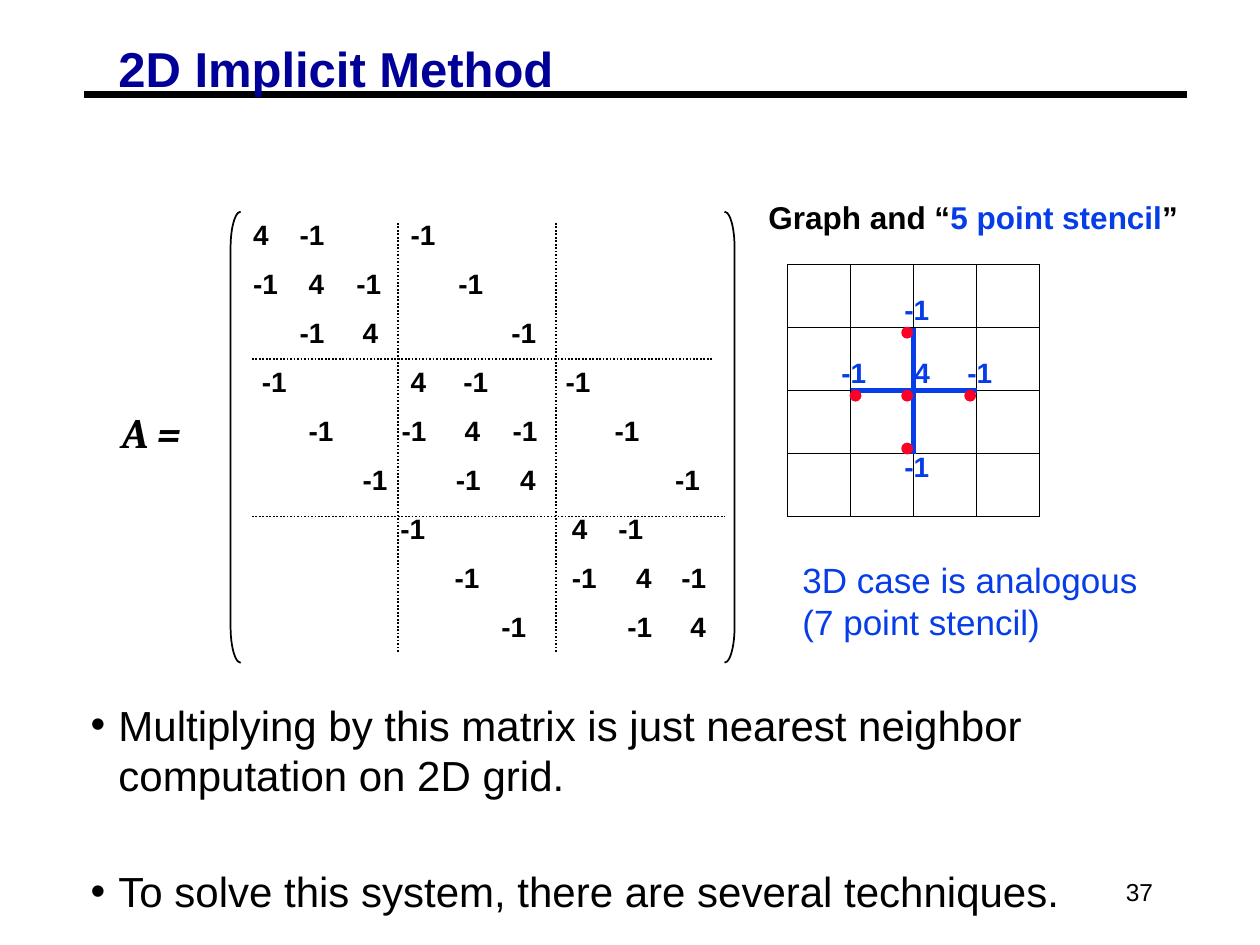
"""Build the "2D Implicit Method" slide: a block matrix, its grid stencil and two bullets."""
from dataclasses import dataclass

from lxml.etree import SubElement
from pptx import Presentation
from pptx.dml.color import RGBColor
from pptx.enum.dml import MSO_LINE
from pptx.enum.shapes import MSO_CONNECTOR, MSO_SHAPE
from pptx.enum.text import MSO_ANCHOR, MSO_AUTO_SIZE, PP_ALIGN
from pptx.oxml.ns import qn
from pptx.util import Inches, Pt


@dataclass(frozen=True)
class Theme:
    ink: RGBColor = RGBColor.from_string("000000")
    navy: RGBColor = RGBColor.from_string("000099")
    blue: RGBColor = RGBColor.from_string("063DE8")
    red: RGBColor = RGBColor.from_string("FC0128")
    font: str = "Arial"
    math: str = "Cambria"
    title: int = 28
    body: int = 24
    note: int = 20
    head: int = 18
    entry: int = 16
    page: int = 14


T = Theme()
prs = Presentation()
prs.slide_width, prs.slide_height = Inches(10), Inches(7.5)
COL, ROW = prs.slide_width / 20, prs.slide_height / 15
s = prs.slides.add_slide(prs.slide_layouts[1])


def grid(x, y, w, h):
    return [int(x * COL), int(y * ROW), int(w * COL), int(h * ROW)]


def write(sp, lines, size, color, bold=False, font=T.font, wrap=True, before=0):
    tf = sp.text_frame
    tf.word_wrap = wrap
    tf.auto_size = MSO_AUTO_SIZE.NONE
    tf.vertical_anchor = MSO_ANCHOR.TOP
    tf.text = "\n".join(lines)
    for i, p in enumerate(tf.paragraphs):
        p.alignment = PP_ALIGN.LEFT
        p.space_before = Pt(before if i else 0)
        p.font.size, p.font.name, p.font.bold = Pt(size), font, bold
        p.font.color.rgb = color
    return tf


title, body = s.placeholders
title.left, title.top, title.width, title.height = grid(1.74, 0.68, 9.08, 0.92)
body.left, body.top, body.width, body.height = grid(1.3, 11.04, 17.5, 3.82)
write(title, ["2D Implicit Method"], T.title, T.navy, True).paragraphs[0].line_spacing = 0.87
bullets = ["Multiplying by this matrix is just nearest neighbor computation on 2D grid.",
           "To solve this system, there are several techniques."]
for p in write(body, bullets, T.body, T.ink, before=37.5).paragraphs:
    pPr = p._p.get_or_add_pPr()
    pPr.set("marL", str(Inches(0.22)))
    pPr.set("indent", str(-Inches(0.22)))
for sp in (title, body):
    tf = sp.text_frame
    tf.margin_left = tf.margin_right = Inches(0.07)
    tf.margin_top = tf.margin_bottom = Inches(0.03)

GX, GY, CX, CY = 12.5, 4.2, 14.5, 6.2
squares = [(0, 0, 4), (0, 2, 2), (2, 0, 2)]
squares += [(c, r, 1) for c in range(4) for r in range(4) if (c + r) % 2 == (c < 2)]
outlines = [(MSO_SHAPE.RECTANGLE, GX + c, GY + r, n, n) for c, r, n in squares]
outlines += [(MSO_SHAPE.LEFT_BRACKET, 3.66, 3.36, 0.16, 7.16),
             (MSO_SHAPE.RIGHT_BRACKET, 11.5, 3.36, 0.16, 7.16)]
drawn = []
for kind, *place in outlines:
    sp = s.shapes.add_shape(kind, *grid(*place))
    sp.shadow.inherit = False
    sp.fill.background()
    sp.line.color.rgb, sp.line.width = T.ink, Pt(1)
    if kind != MSO_SHAPE.RECTANGLE:
        sp.adjustments[0] = 3.583
    drawn.append(sp)
lower, upper = drawn[1:3]

lines = [(1.34, 1.5, 18.84, 1.5, T.ink, 3.75, None),
         (CX - 1, CY, CX + 1, CY, T.blue, 3, None),
         (CX, CY - 1, CX, CY + 1, T.blue, 3, None),
         (4, 5.7, 11.32, 5.7, T.ink, 1, MSO_LINE.ROUND_DOT),
         (4, 8.2, 11.5, 8.2, T.ink, 1, MSO_LINE.ROUND_DOT),
         (6.32, 3.54, 6.32, 10.36, T.ink, 1, MSO_LINE.ROUND_DOT),
         (8.82, 3.54, 8.82, 10.36, T.ink, 1, MSO_LINE.ROUND_DOT)]
joined = []
for *ends, color, width, dash in lines:
    cn = s.shapes.add_connector(MSO_CONNECTOR.STRAIGHT, *grid(*ends))
    cn.line.color.rgb, cn.line.width = color, Pt(width)
    if dash:
        cn.line.dash_style = dash
    SubElement(cn.element.spPr, qn("a:effectLst"))
    joined.append(cn)
rule, across, down = joined[:3]
s.shapes.element.insert(2, rule.element)
across.begin_connect(lower, 0)
across.end_connect(upper, 2)
down.begin_connect(upper, 1)
down.end_connect(lower, 3)

stencil = [("4", 0.16, 0, 0, 0), ("-1", 0, 1.5, 0, 0.84), ("-1", -1, 0, -0.82, 0),
           ("-1", 0, -1, 0, -1), ("-1", 1, 0, 1, 0)]
for label, dx, dy, dot_dx, dot_dy in stencil:
    sp = s.shapes.add_textbox(*grid(CX - 0.34 + dx, CY - 0.66 + dy, 0.8, 0.74))
    write(sp, [label], T.entry, T.blue, True, wrap=False)
    dot = s.shapes.add_shape(MSO_SHAPE.OVAL, *grid(CX - 0.18 + dot_dx, CY + dot_dy, 0.16, 0.16))
    dot.shadow.inherit = False
    dot.fill.solid()
    dot.fill.fore_color.rgb = dot.line.color.rgb = T.red
    dot.line.width = Pt(1)

matrix = [[("4", 0), ("-1", 0.37), ("-1", 1.25)],
          [("-1", 0), ("4", 0.44), ("-1", 0.82), ("-1", 1.63)],
          [("-1", 0.37), ("4", 0.87), ("-1", 2.05)],
          [("-1", 0.07), ("4", 1.25), ("-1", 1.67), ("-1", 2.48)],
          [("-1", 0.44), ("-1", 1.18), ("4", 1.68), ("-1", 2.06), ("-1", 2.87)],
          [("-1", 0.87), ("-1", 1.61), ("4", 2.12), ("-1", 3.35)],
          [("-1", 1.17), ("4", 2.53), ("-1", 2.9)],
          [("-1", 1.6), ("-1", 2.53), ("4", 3.04), ("-1", 3.4)],
          [("-1", 1.97), ("-1", 2.97), ("4", 3.47)]]
sp = s.shapes.add_textbox(*grid(3.82, 3.36, 8.16, 7.16))
rows = ["".join("\t" * (stop > 0) + entry for entry, stop in row) for row in matrix]
tf = write(sp, rows, T.entry, T.ink, True, before=8.75)
for p, row in zip(tf.paragraphs, matrix):
    tabs = p._p.get_or_add_pPr().makeelement(qn("a:tabLst"), {})
    for entry, stop in row:
        if stop:
            SubElement(tabs, qn("a:tab"), pos=str(Inches(stop)), algn="l")
    p._p.pPr.find(qn("a:defRPr")).addprevious(tabs)

sp = s.shapes.add_textbox(*grid(1.74, 6.36, 2.08, 1))
write(sp, ["A ="], T.body, T.ink, True, T.math).paragraphs[0].font.italic = True

sp = s.shapes.add_textbox(*grid(12, 3.04, 6.9, 0.8))
p = write(sp, ["Graph and “"], T.head, T.ink, True, wrap=False).paragraphs[0]
for text, color in (("5 point stencil", T.blue), ("”", T.ink)):
    r = p.add_run()
    r.text = text
    r.font.color.rgb = color

sp = s.shapes.add_textbox(*grid(12.54, 8.76, 6.22, 1.54))
write(sp, ["3D case is analogous (7 point stencil)"], T.note, T.blue)

sp = s.shapes.add_textbox(*grid(14.34, 13.66, 4.16, 1))
tf = write(sp, ["37"], T.page, T.ink)
tf.vertical_anchor = MSO_ANCHOR.MIDDLE
tf.paragraphs[0].alignment = PP_ALIGN.RIGHT

prs.save("out.pptx")
